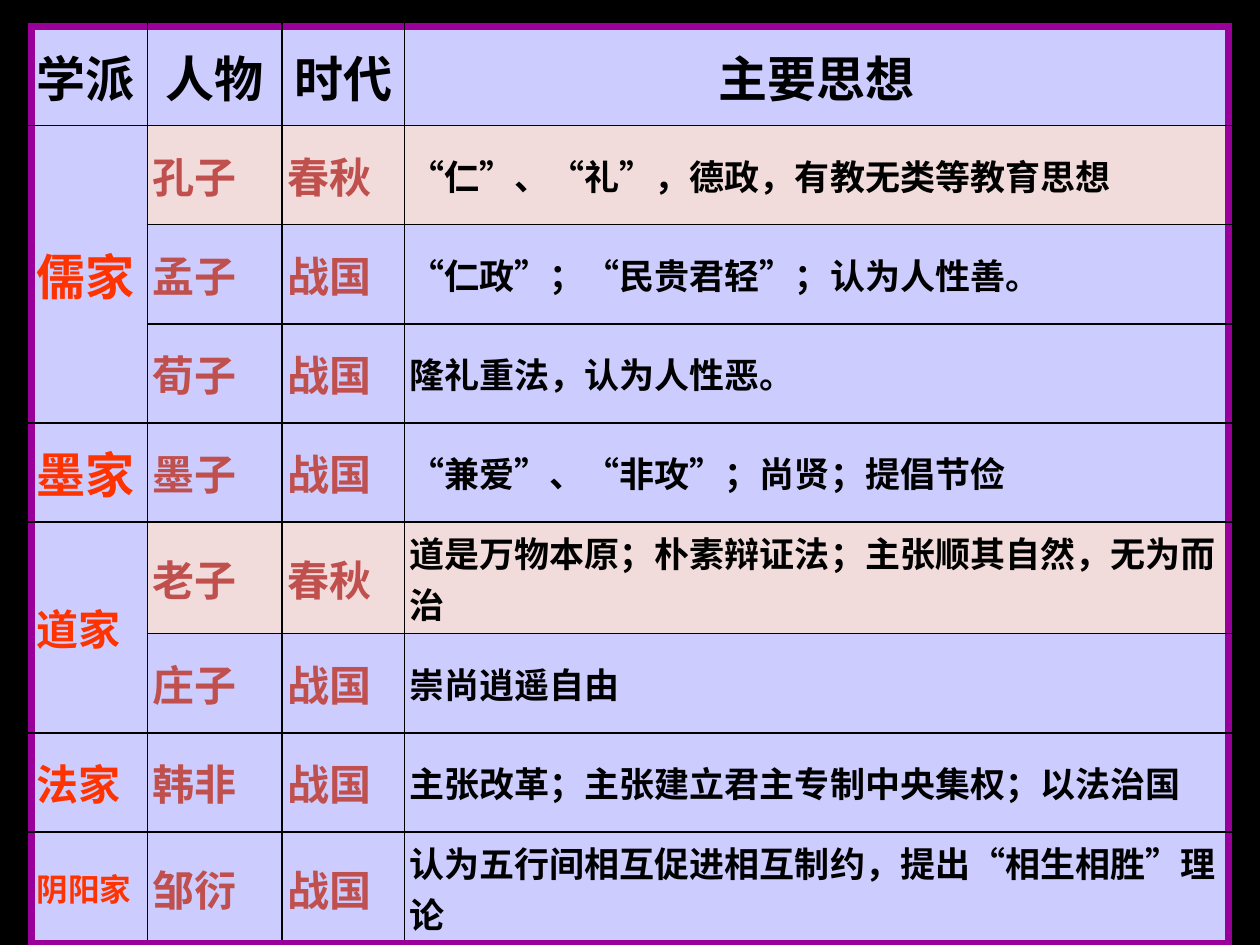
import pptx
import pptx.dml.color
import pptx.enum.lang
import pptx.enum.text
import pptx.oxml
import pptx.oxml.ns
import pptx.util
from pptx.util import Inches

HEADERS = ["学派", "人物", "时代", "主要思想"]
# school, type size of its name, thinkers: (name, era, ideas, typeface)
SERIF, SANS = "Times New Roman", "Calibri"
SCHOOLS = [
    ("儒家", 28, [
        ("孔子", "春秋", "“仁”、“礼”，德政，有教无类等教育思想", SERIF),
        ("孟子", "战国", "“仁政”；“民贵君轻”；认为人性善。", SERIF),
        ("荀子", "战国", "隆礼重法，认为人性恶。", SANS),
    ]),
    ("墨家", 28, [("墨子", "战国", "“兼爱”、“非攻”；尚贤；提倡节俭", SERIF)]),
    ("道家", 24, [
        ("老子", "春秋", "道是万物本原；朴素辩证法；主张顺其自然，无为而治", SANS),
        ("庄子", "战国", "崇尚逍遥自由", SERIF),
    ]),
    ("法家", 24, [("韩非", "战国", "主张改革；主张建立君主专制中央集权；以法治国", SERIF)]),
    ("阴阳家", 18, [("邹衍", "战国", "认为五行间相互促进相互制约，提出“相生相胜”理论", SERIF)]),
]
THEME = {
    "background": "000000", "fill": "CCCCFF", "spring_fill": "F2DCDB",
    "text": "000000", "school": "FF3300", "thinker": "C0504D",
    "frame": ("990099", 4.5), "grid": ("000000", 1),
    "header_size": 28, "thinker_size": 24, "ideas_size": 20,
}
COLUMN_WIDTHS = [0.92, 1.07, 0.97, 6.54]
LEFT, TOP, HEIGHT = 0.25, 0.21, 7.08
MARGIN = Inches(0.04)


def color(value):
    return pptx.dml.color.RGBColor.from_string(value)


def write_cell(cell, text, size, text_color, typeface=SERIF, fill=THEME["fill"],
               centered=False, spaced=True):
    """Fill and format a cell; spaced adds 20% of a line above the text."""
    cell.fill.solid()
    cell.fill.fore_color.rgb = color(fill)
    cell.vertical_anchor = pptx.enum.text.MSO_ANCHOR.MIDDLE
    cell.margin_left = cell.margin_right = cell.margin_top = cell.margin_bottom = MARGIN
    cell.text_frame.text = text
    paragraph = cell.text_frame.paragraphs[0]
    alignment = pptx.enum.text.PP_ALIGN
    paragraph.alignment = alignment.CENTER if centered else alignment.LEFT
    if spaced:
        paragraph.space_before = pptx.util.Pt(0)
        spacing = paragraph._p.pPr.find(pptx.oxml.ns.qn("a:spcBef"))
        spacing.remove(spacing[0])
        spacing.append(pptx.oxml.parse_xml(
            f'<a:spcPct {pptx.oxml.ns.nsdecls("a")} val="20000"/>'))
    font = paragraph.runs[0].font
    font.name, font.size, font.bold = typeface, pptx.util.Pt(size), True
    font.color.rgb = color(text_color)
    font.language_id = pptx.enum.lang.MSO_LANGUAGE_ID.SIMPLIFIED_CHINESE


def draw_borders(table):
    """Give the table a thick outer frame and thin inner lines."""
    last_row, last_column = len(table.rows) - 1, len(table.columns) - 1
    for row in range(last_row + 1):
        for column in range(last_column + 1):
            outer = {"L": column == 0, "R": column == last_column,
                     "T": row == 0, "B": row == last_row}
            properties = table.cell(row, column)._tc.get_or_add_tcPr()
            for position, (side, is_outer) in enumerate(outer.items()):
                line_color, width = THEME["frame" if is_outer else "grid"]
                properties.insert(position, pptx.oxml.parse_xml(
                    f'<a:ln{side} {pptx.oxml.ns.nsdecls("a")} w="{pptx.util.Pt(width)}">'
                    f'<a:solidFill><a:srgbClr val="{line_color}"/></a:solidFill>'
                    f'</a:ln{side}>'))


def fill_table(table):
    for column, header in enumerate(HEADERS):
        write_cell(table.cell(0, column), header, THEME["header_size"], THEME["text"],
                   centered=column > 0)
    row = 1
    for school, school_size, thinkers in SCHOOLS:
        school_cell = table.cell(row, 0)
        if len(thinkers) > 1:
            school_cell.merge(table.cell(row + len(thinkers) - 1, 0))
        write_cell(school_cell, school, school_size, THEME["school"],
                   spaced=school != "道家")
        for name, era, ideas, typeface in thinkers:
            fill = THEME["spring_fill" if era == "春秋" else "fill"]
            for column, text in ((1, name), (2, era)):
                write_cell(table.cell(row, column), text, THEME["thinker_size"],
                           THEME["thinker"], typeface, fill, spaced=typeface == SERIF)
            write_cell(table.cell(row, 3), ideas, THEME["ideas_size"], THEME["text"],
                       typeface, fill, spaced=False)
            row += 1


def main():
    presentation = pptx.Presentation()
    presentation.slide_width, presentation.slide_height = Inches(10), Inches(7.5)
    slide = presentation.slides.add_slide(presentation.slide_layouts[6])
    slide.background.fill.solid()
    slide.background.fill.fore_color.rgb = color(THEME["background"])

    row_count = 1 + sum(len(thinkers) for _, _, thinkers in SCHOOLS)
    table = slide.shapes.add_table(
        row_count, len(HEADERS), Inches(LEFT), Inches(TOP),
        Inches(sum(COLUMN_WIDTHS)), Inches(HEIGHT)).table
    table.first_row = table.horz_banding = False
    for column, width in zip(table.columns, COLUMN_WIDTHS):
        column.width = Inches(width)
    fill_table(table)
    draw_borders(table)
    presentation.save("out.pptx")


if __name__ == "__main__":
    main()
